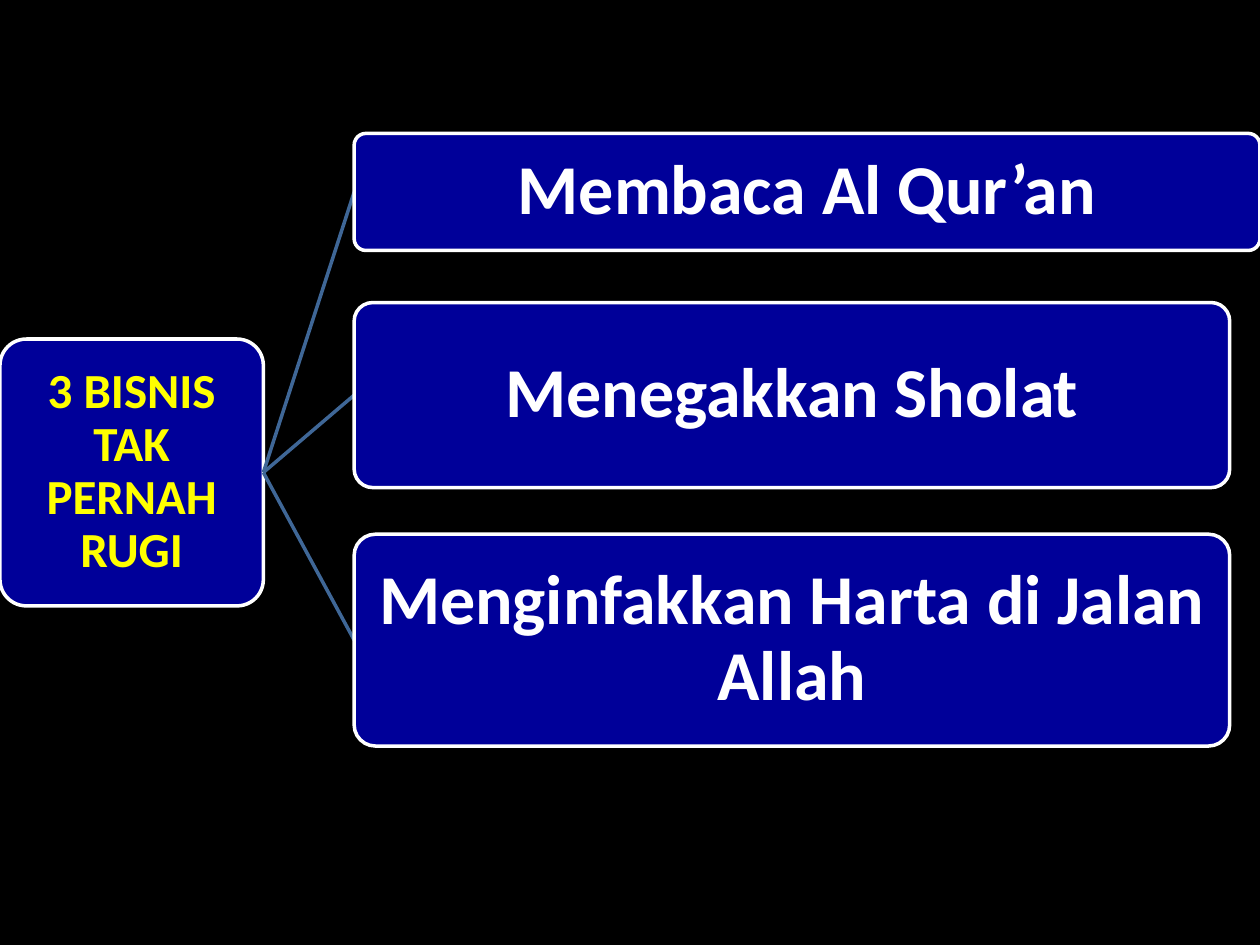
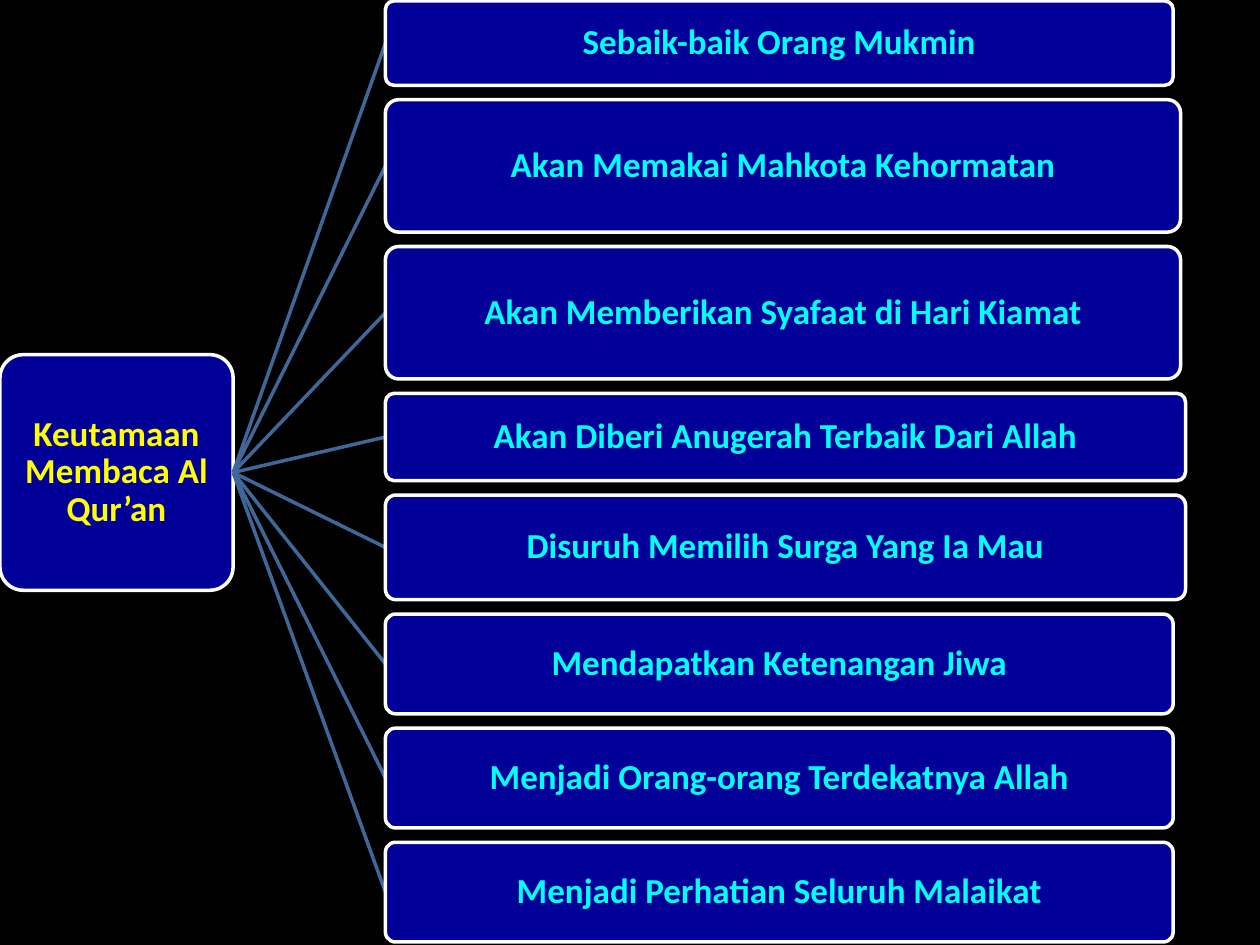
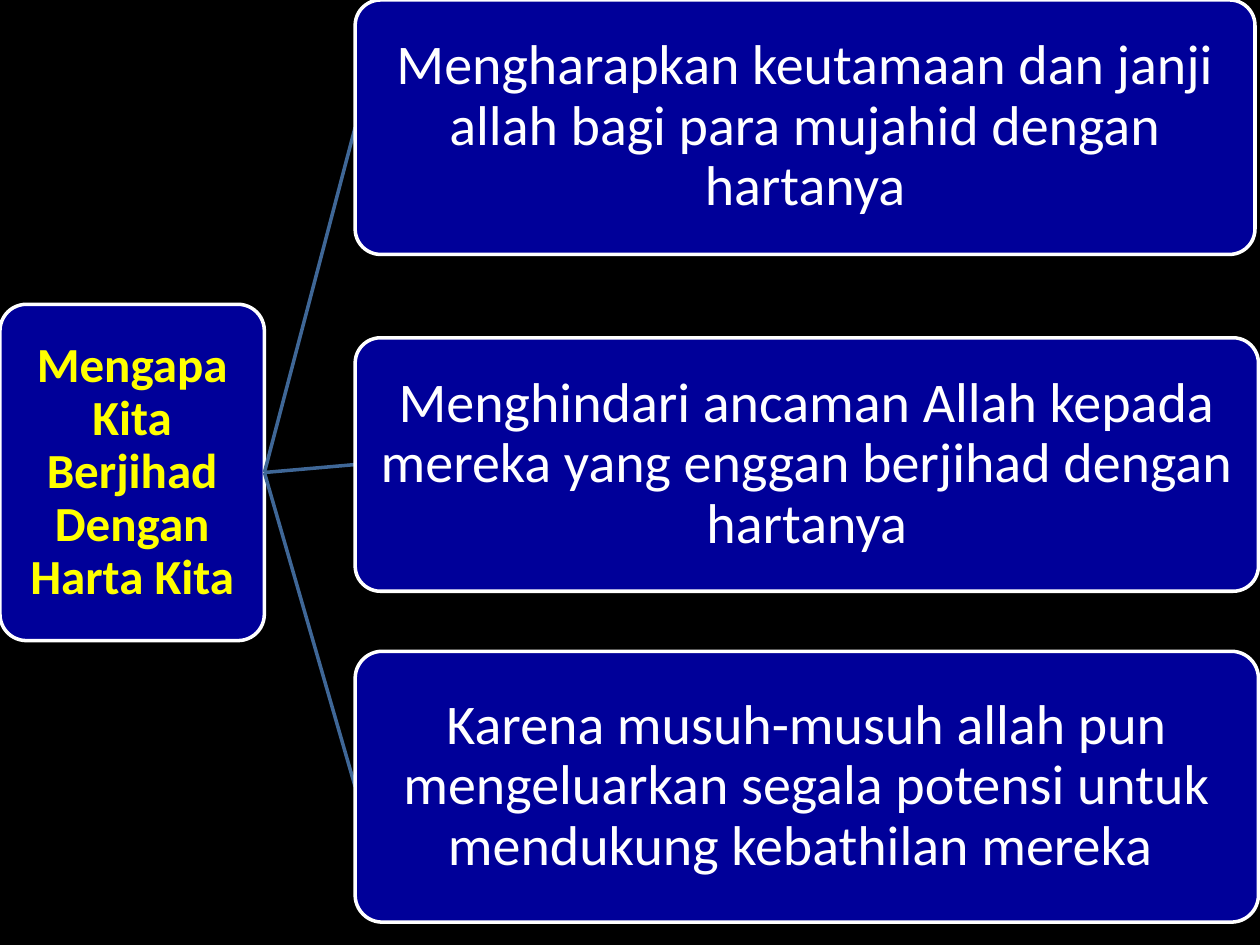
from pptx import Presentation
from pptx import util as u
from pptx.dml.color import RGBColor
from pptx.enum import shapes, text
from pptx.oxml.ns import qn
from lxml import etree

WIDTH, HEIGHT = 25.4, 19.05
BLACK, NAVY, WHITE = "000000", "000099", "FFFFFF"
STEEL, YELLOW, CYAN = "3F6797", "FFFF00", "00FFFF"


def paint(color_format, value):
    color_format.rgb = RGBColor.from_string(value)


class Deck:
    """Style of the tree diagrams and the slide being drawn; lengths in cm."""

    font = "Calibri"
    line_width = u.Pt(2)
    inset = u.Cm(0.05)

    def __init__(self):
        self.prs = Presentation()
        self.prs.slide_width, self.prs.slide_height = u.Cm(WIDTH), u.Cm(HEIGHT)
        self.s = None

    def slide(self):
        self.s = self.prs.slides.add_slide(self.prs.slide_layouts[6])
        fill = self.s.background.fill
        fill.solid()
        paint(fill.fore_color, BLACK)

    def box(self, left, top, width, height, label, size, color, bold):
        sp = self.s.shapes.add_shape(
            shapes.MSO_SHAPE.ROUNDED_RECTANGLE,
            u.Cm(left), u.Cm(top), u.Cm(width), u.Cm(height))
        sp.adjustments[0] = 0.1
        sp.shadow.inherit = False
        sp.fill.solid()
        paint(sp.fill.fore_color, NAVY)
        paint(sp.line.color, WHITE)
        sp.line.width = self.line_width
        # Text
        tf = sp.text_frame
        tf.word_wrap = True
        tf.vertical_anchor = text.MSO_ANCHOR.MIDDLE
        tf.margin_left = tf.margin_right = self.inset
        tf.margin_top = tf.margin_bottom = self.inset
        p = tf.paragraphs[0]
        p.text = label
        p.alignment = text.PP_ALIGN.CENTER
        p.line_spacing = 0.9
        p.font.name, p.font.size, p.font.bold = self.font, u.Pt(size), bold
        paint(p.font.color, color)
        return sp

    def connector(self):
        c = self.s.shapes.add_connector(shapes.MSO_CONNECTOR.STRAIGHT, 0, 0, 0, 0)
        paint(c.line.color, STEEL)
        c.line.width = self.line_width
        etree.SubElement(c._element.spPr, qn("a:effectLst"))
        return c

    def tree(self, root, root_size, left, branches, size, color, bold=True):
        """Root is (width, height, label, font size); branches are (top, width, height, label)."""
        self.slide()
        width, height, label = root
        trunk = self.box(0, (HEIGHT - height) / 2, width, height,
                         label, root_size, YELLOW, True)
        for top, width, height, label in branches:
            c = self.connector()  # added first so that it lies behind its box
            branch = self.box(left, top, width, height, label, size, color, bold)
            c.begin_connect(trunk, 3)
            c.end_connect(branch, 1)


def stack(top, gap, rows):
    """Put a top in front of each (width, height, label), one below the other."""
    placed = []
    for width, height, label in rows:
        placed.append((top, width, height, label))
        top += height + gap
    return placed


def main():
    deck = Deck()

    # Three ventures that never lose
    deck.tree((5.31, 5.38, "3 BISNIS TAK PERNAH RUGI"), 28, 7.14, [
        (2.69, 18.26, 2.36, "Membaca Al Qur’an"),
        (6.1, 17.65, 3.73, "Menegakkan Sholat"),
        (10.77, 17.65, 4.27, "Menginfakkan Harta di Jalan Allah"),
    ], 40, WHITE)

    # Virtues of reading
    virtues = stack(0.02, 0.29, [
        (15.88, 1.7, "Sebaik-baik Orang Mukmin"),
        (16.03, 2.67, "Akan Memakai Mahkota Kehormatan"),
        (16.03, 2.67, "Akan Memberikan Syafaat di Hari Kiamat"),
        (16.13, 1.76, "Akan Diberi Anugerah Terbaik Dari Allah"),
        (16.13, 2.11, "Disuruh Memilih Surga Yang Ia Mau"),
        (15.88, 2.01, "Mendapatkan Ketenangan Jiwa"),
        (15.88, 2.01, "Menjadi Orang-orang Terdekatnya Allah"),
        (15.88, 2.01, "Menjadi Perhatian Seluruh Malaikat"),
    ])
    deck.tree((4.7, 4.75, "Keutamaan Membaca Al Qur’an"), 20, 7.77,
              virtues, 20, CYAN)

    # Reasons for giving wealth
    deck.tree((5.33, 6.78, "Mengapa Kita Berjihad Dengan Harta Kita"), 28, 7.16, [
        (0, 18.14, 5.13, "Mengharapkan keutamaan dan janji allah bagi para "
                         "mujahid dengan hartanya"),
        (6.81, 18.21, 5.11, "Menghindari ancaman Allah kepada mereka yang "
                            "enggan berjihad dengan hartanya"),
        (13.13, 18.21, 5.46, "Karena musuh-musuh allah pun mengeluarkan segala "
                             "potensi untuk mendukung kebathilan mereka "),
    ], 32, WHITE, bold=False)

    deck.prs.save("out.pptx")


if __name__ == "__main__":
    main()
